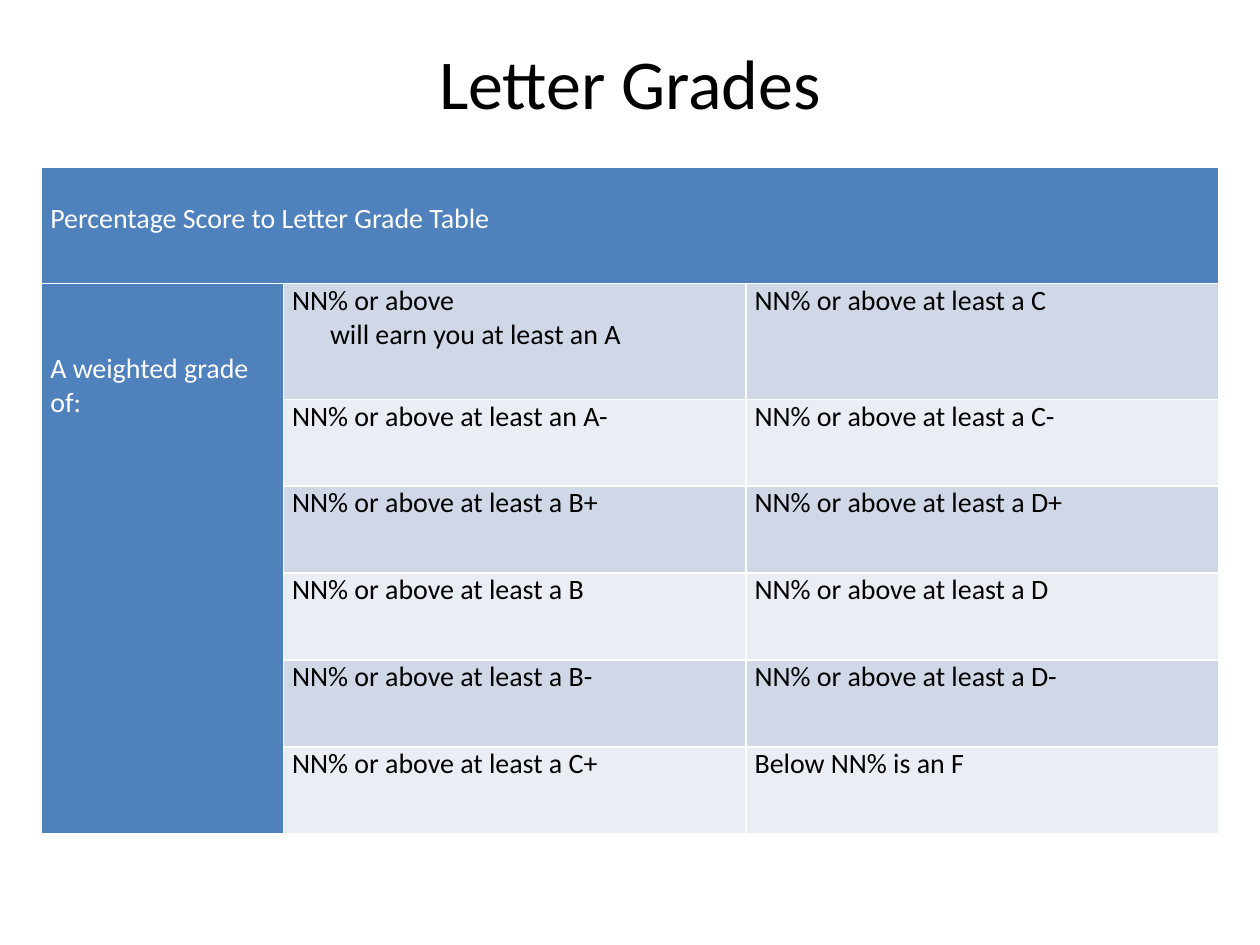
from pptx import Presentation
from pptx.dml.color import RGBColor
from pptx.enum.text import MSO_ANCHOR, PP_ALIGN
from pptx.util import Inches, Pt

CENTER = PP_ALIGN.CENTER
MIDDLE = MSO_ANCHOR.MIDDLE
TITLE_ONLY = 5
FONT = "Calibri"
BLUE, WHITE, BLACK = "4F81BD", "FFFFFF", "000000"
BANDS = ["D0D8E8", "E9EDF4"]

COLUMN_WIDTHS = [1.92, 3.67, 3.75]
ROW_HEIGHTS = [0.92, 0.92] + [0.69] * 5
GRADES = [
    ("NN% or above\nwill earn you at least an A", "NN% or above at least a C"),
    ("NN% or above at least an A-", "NN% or above at least a C-"),
    ("NN% or above at least a B+", "NN% or above at least a D+"),
    ("NN% or above at least a B", "NN% or above at least a D"),
    ("NN% or above at least a B-", "NN% or above at least a D-"),
    ("NN% or above at least a C+", "Below NN% is an F"),
]


def format_text(text_frame, size, color):
    for paragraph in text_frame.paragraphs:
        for run in paragraph.runs:
            run.font.name = FONT
            run.font.size = Pt(size)
            run.font.bold = False
            run.font.color.rgb = RGBColor.from_string(color)


def fill_cell(cell, text, fill, color, top=0):
    cell.fill.solid()
    cell.fill.fore_color.rgb = RGBColor.from_string(fill)
    cell.margin_left = cell.margin_right = Inches(0.07)
    cell.margin_top, cell.margin_bottom = Inches(top), 0
    cell.text_frame.text = text
    format_text(cell.text_frame, 16, color)


presentation = Presentation()
presentation.slide_width = Inches(10)
presentation.slide_height = Inches(7.5)
slide = presentation.slides.add_slide(presentation.slide_layouts[TITLE_ONLY])

# Title
title = slide.shapes.title
title.left, title.top = Inches(0.5), Inches(0.3)
title.width, title.height = Inches(9), Inches(0.7)
title.text_frame.text = "Letter Grades"
title.text_frame.vertical_anchor = MIDDLE
title.text_frame.paragraphs[0].alignment = CENTER
format_text(title.text_frame, 40, BLACK)

# Table grid
table = slide.shapes.add_table(
    len(ROW_HEIGHTS), len(COLUMN_WIDTHS), Inches(0.33), Inches(1.33),
    Inches(sum(COLUMN_WIDTHS)), Inches(sum(ROW_HEIGHTS))).table
for column, width in zip(table.columns, COLUMN_WIDTHS):
    column.width = Inches(width)
for row, height in zip(table.rows, ROW_HEIGHTS):
    row.height = Inches(height)

# Heading across the top and label down the side
table.cell(0, 0).merge(table.cell(0, 2))
fill_cell(table.cell(0, 0), "Percentage Score to Letter Grade Table", BLUE, WHITE, 0.27)
table.cell(1, 0).merge(table.cell(6, 0))
fill_cell(table.cell(1, 0), "A weighted grade of:", BLUE, WHITE, 0.54)

# Grade thresholds in banded rows
for row_index, grades in enumerate(GRADES, start=1):
    for column_index, grade in enumerate(grades, start=1):
        fill_cell(table.cell(row_index, column_index), grade,
                  BANDS[(row_index - 1) % 2], BLACK)

# Indented second line of the first threshold
second_line = table.cell(1, 1).text_frame.paragraphs[1]
second_line._p.get_or_add_pPr().set("marL", str(Inches(0.3)))

presentation.save("out.pptx")
